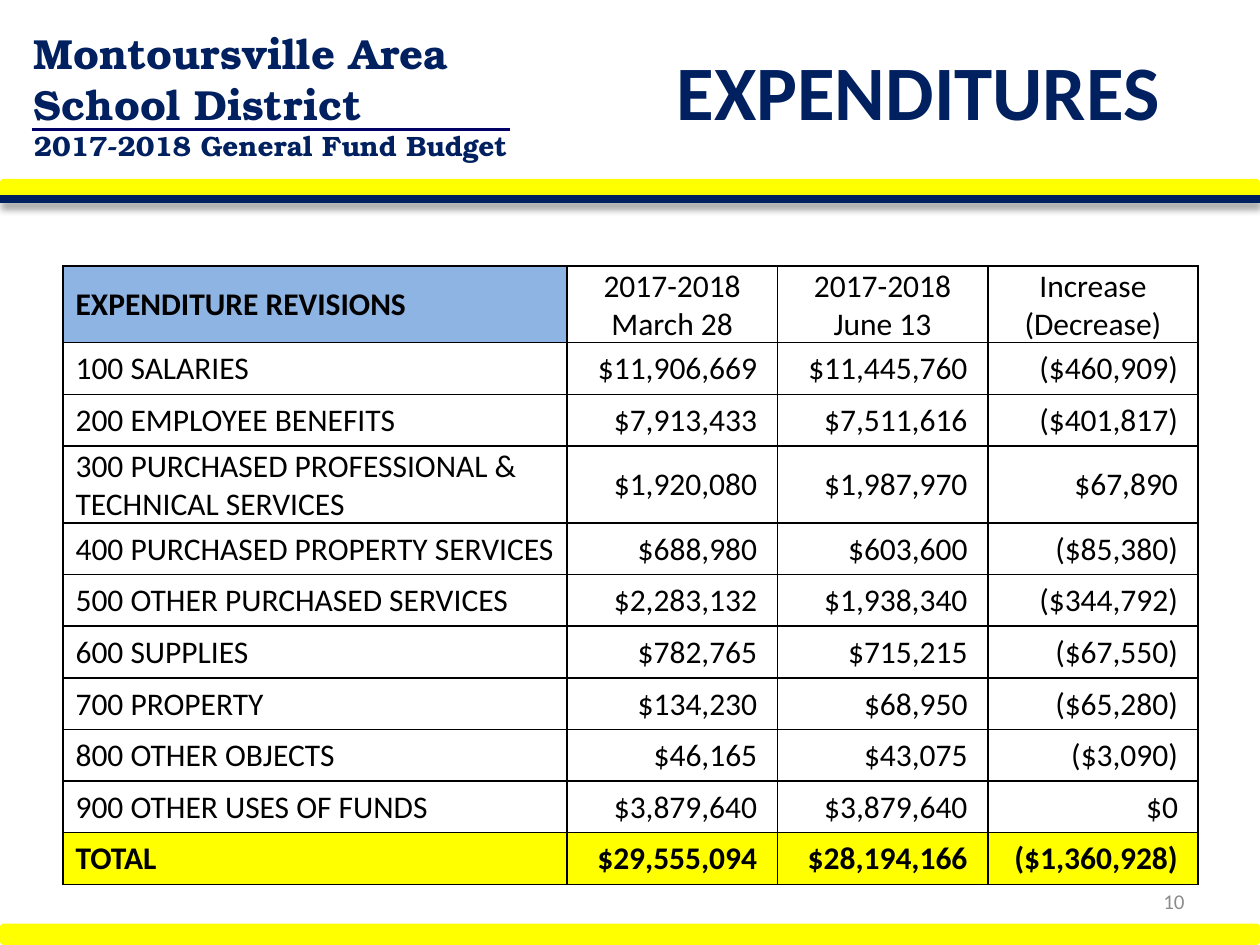
import dataclasses

import lxml.etree
import pptx
import pptx.dml.color
import pptx.enum.shapes
import pptx.enum.text
import pptx.oxml
import pptx.oxml.ns
import pptx.util

Inches = pptx.util.Inches
ALIGN = pptx.enum.text.PP_ALIGN
ANCHOR = pptx.enum.text.MSO_ANCHOR
qn = pptx.oxml.ns.qn


@dataclasses.dataclass(frozen=True)
class Theme:
    navy: str = "002060"
    rule: str = "000066"
    yellow: str = "FFFF00"
    blue: str = "8EB4E3"
    black: str = "000000"
    gray: str = "8C8C8C"
    body_font: str = "Calibri"
    brand_font: str = "TeX Gyre Bonum"
    title_size: int = 44
    brand_size: int = 24
    subtitle_size: int = 16
    table_size: int = 18
    number_size: int = 12


theme = Theme()


def format_paragraph(para, size, color, font=theme.body_font, bold=False, align=ALIGN.LEFT):
    para.alignment = align
    for span in para.runs:
        span.font.name = font
        span.font.size = pptx.util.Pt(size)
        span.font.bold = bold
        span.font.color.rgb = pptx.dml.color.RGBColor.from_string(color)


deck = pptx.Presentation()
deck.slide_width, deck.slide_height = Inches(10), Inches(7.5)
page = deck.slides.add_slide(deck.slide_layouts[5])

# Yellow bands
for top in (1.42, 7.33):
    band = page.shapes.add_shape(
        pptx.enum.shapes.MSO_SHAPE.ROUNDED_RECTANGLE,
        Inches(0), Inches(top), Inches(10), Inches(0.17))
    band.shadow.inherit = False
    band.fill.solid()
    band.fill.fore_color.rgb = pptx.dml.color.RGBColor.from_string(theme.yellow)
    band.line.fill.background()

# Header rules: the thick one casts a soft shadow
for left, right, y, color, width, shadowed in (
        (0, 10, 1.58, theme.navy, 4.5, True),
        (0.25, 4.05, 1.03, theme.rule, 1.5, False)):
    rule = page.shapes.add_connector(
        pptx.enum.shapes.MSO_CONNECTOR.STRAIGHT,
        Inches(left), Inches(y), Inches(right), Inches(y))
    rule.line.color.rgb = pptx.dml.color.RGBColor.from_string(color)
    rule.line.width = pptx.util.Pt(width)
    effects = lxml.etree.SubElement(rule._element.spPr, qn("a:effectLst"))
    if shadowed:
        shadow = lxml.etree.SubElement(
            effects, qn("a:outerShdw"), blurRad=str(pptx.util.Pt(4)),
            dist=str(pptx.util.Pt(3)), dir="5400000", rotWithShape="0")
        shade = lxml.etree.SubElement(shadow, qn("a:srgbClr"), val=theme.black)
        lxml.etree.SubElement(shade, qn("a:alpha"), val="40000")

# District name
box = page.shapes.add_textbox(Inches(0.17), Inches(0.17), Inches(4.25), Inches(1.18))
box.text_frame.word_wrap = True
box.text_frame.text = "Montoursville Area\nSchool District\n2017-2018 General Fund Budget"
sizes = (theme.brand_size, theme.brand_size, theme.subtitle_size)
for para, size in zip(box.text_frame.paragraphs, sizes):
    format_paragraph(para, size, theme.navy, theme.brand_font, bold=True)

# Title
title = page.shapes.title
title.left, title.top = Inches(4.58), Inches(0)
title.width, title.height = Inches(5.42), Inches(1.42)
title.text_frame.text = "EXPENDITURES"
title.text_frame.vertical_anchor = ANCHOR.MIDDLE
format_paragraph(title.text_frame.paragraphs[0], theme.title_size, theme.navy,
                 bold=True, align=ALIGN.CENTER)

# Expenditure table
rows = [
    ("EXPENDITURE REVISIONS", "2017-2018 March 28", "2017-2018\nJune 13", "Increase (Decrease)"),
    ("100 SALARIES", "$11,906,669", "$11,445,760", "($460,909)"),
    ("200 EMPLOYEE BENEFITS", "$7,913,433", "$7,511,616", "($401,817)"),
    ("300 PURCHASED PROFESSIONAL & TECHNICAL SERVICES", "$1,920,080", "$1,987,970", "$67,890"),
    ("400 PURCHASED PROPERTY SERVICES", "$688,980", "$603,600", "($85,380)"),
    ("500 OTHER PURCHASED SERVICES", "$2,283,132", "$1,938,340", "($344,792)"),
    ("600 SUPPLIES", "$782,765", "$715,215", "($67,550)"),
    ("700 PROPERTY", "$134,230", "$68,950", "($65,280)"),
    ("800 OTHER OBJECTS", "$46,165", "$43,075", "($3,090)"),
    ("900 OTHER USES OF FUNDS", "$3,879,640", "$3,879,640", "$0"),
    ("TOTAL", "$29,555,094", "$28,194,166", "($1,360,928)"),
]
row_height = 0.41
last = len(rows) - 1
table = page.shapes.add_table(
    len(rows), 4, Inches(0.5), Inches(2.11), Inches(9), Inches(row_height * len(rows))).table
for column, width in zip(table.columns, (4, 1.67, 1.67, 1.67)):
    column.width = Inches(width)
for r, values in enumerate(rows):
    table.rows[r].height = Inches(row_height)
    for c, value in enumerate(values):
        cell = table.cell(r, c)
        cell.text_frame.text = value
        cell.vertical_anchor = ANCHOR.MIDDLE
        cell.margin_left = Inches(0.1 if c == 0 else 0.01)
        cell.margin_right = Inches(0.16 if r and c else 0.01)
        cell.margin_top, cell.margin_bottom = Inches(0.01), Inches(0)
        align = ALIGN.LEFT if c == 0 else ALIGN.RIGHT if r else ALIGN.CENTER
        bold = r == last or (r == 0 and c == 0)
        for para in cell.text_frame.paragraphs:
            format_paragraph(para, theme.table_size, theme.black, bold=bold, align=align)

        # Borders come before the fill in the cell properties
        properties = cell._tc.get_or_add_tcPr()
        for side in ("a:lnL", "a:lnR", "a:lnT", "a:lnB"):
            border = lxml.etree.SubElement(properties, qn(side), w=str(pptx.util.Pt(1)))
            paint = lxml.etree.SubElement(border, qn("a:solidFill"))
            lxml.etree.SubElement(paint, qn("a:srgbClr"), val=theme.black)
        if bold:
            fill_color = theme.yellow if r == last else theme.blue
            cell.fill.solid()
            cell.fill.fore_color.rgb = pptx.dml.color.RGBColor.from_string(fill_color)
        else:
            cell.fill.background()

# Page number
number = page.shapes.add_textbox(Inches(7.17), Inches(6.95), Inches(2.33), Inches(0.4))
number.text_frame.word_wrap = True
number.text_frame.vertical_anchor = ANCHOR.MIDDLE
number.text_frame.text = "10"
format_paragraph(number.text_frame.paragraphs[0], theme.number_size, theme.gray,
                 align=ALIGN.RIGHT)

deck.save("out.pptx")
